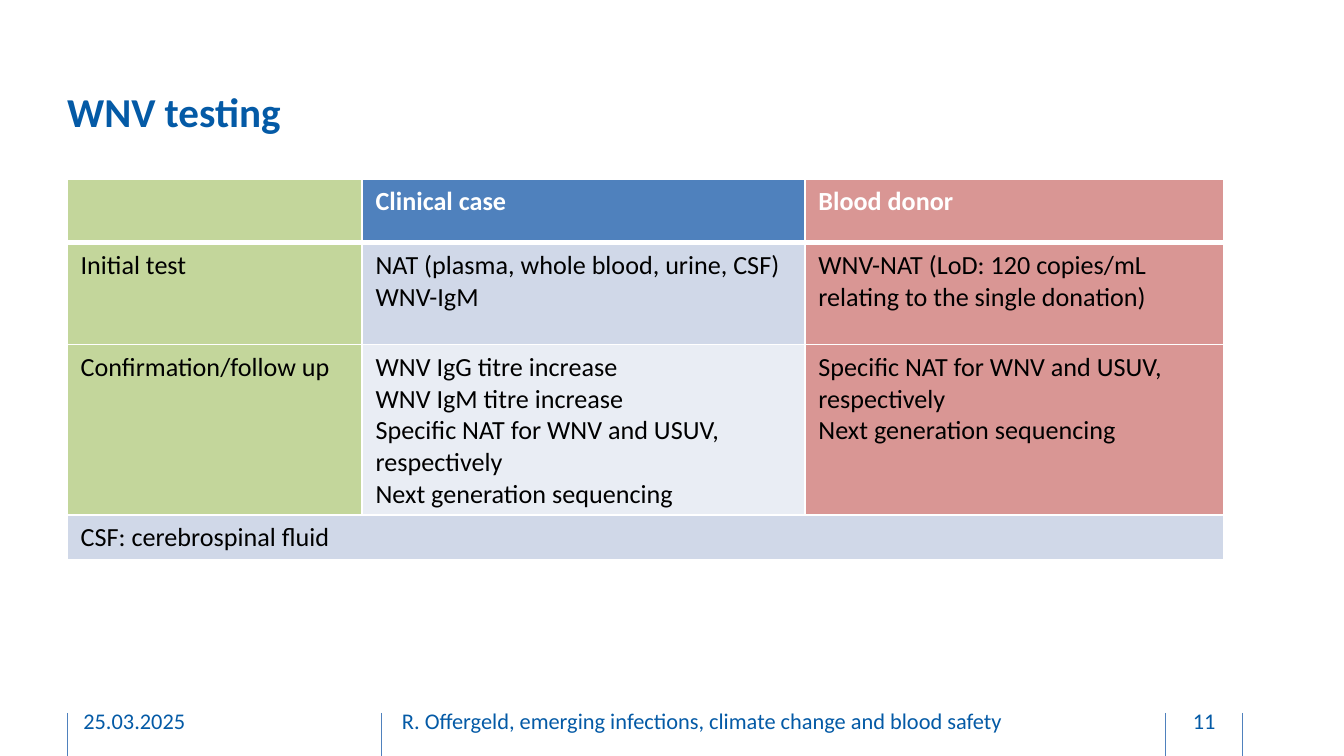
"""Build the WNV testing slide with its comparison table and footer."""
from dataclasses import dataclass

from lxml.etree import SubElement
from pptx import Presentation
from pptx.dml.color import RGBColor as RGB
from pptx.enum.shapes import MSO_CONNECTOR as CONN
from pptx.enum.text import MSO_ANCHOR as ANCHOR, PP_ALIGN as ALIGN
from pptx.oxml import parse_xml
from pptx.oxml.ns import nsdecls, qn
from pptx.util import Inches, Pt


@dataclass(frozen=True)
class Theme:
    font: str = "Calibri"
    title_size: int = 22
    table_size: int = 14
    footer_size: int = 12
    navy: str = "045AA6"
    blue: str = "4F81BD"
    green: str = "C3D69B"
    red: str = "D99694"
    band: str = "D0D8E8"
    pale: str = "E9EDF4"
    white: str = "FFFFFF"
    black: str = "000000"


T = Theme()
prs = Presentation()
prs.slide_width = Inches(10)
prs.slide_height = prs.slide_width * 9 // 16
s = prs.slides.add_slide(prs.slide_layouts[6])
COL = prs.slide_width / 100
ROW = prs.slide_height / 100


def style(p, size, color, bold=False):
    p.font.name, p.font.size, p.font.bold = T.font, Pt(size), bold
    p.font.color.rgb = RGB.from_string(color)


def add_text(text, box, size, inset=0.05, align=ALIGN.LEFT, bold=False):
    x, y, w, h = box
    sp = s.shapes.add_textbox(int(x * COL), int(y * ROW), int(w * COL), int(h * ROW))
    tf = sp.text_frame
    tf.word_wrap, tf.vertical_anchor = True, ANCHOR.MIDDLE
    tf.margin_left = tf.margin_right = 0
    tf.margin_top = tf.margin_bottom = Inches(inset)
    p = tf.paragraphs[0]
    p.text, p.alignment = text, align
    style(p, size, T.navy, bold)


for x in (5, 28.4, 86.7, 92.45):
    line = s.shapes.add_connector(CONN.STRAIGHT, int(x * COL), int(94.3 * ROW),
                                  int(x * COL), prs.slide_height)
    line.line.color.rgb, line.line.width = RGB.from_string(T.blue), Pt(0.5)
    SubElement(line._element.spPr, qn("a:effectLst"))

add_text("WNV testing", (5, 7.8, 87.3, 13.9), T.title_size, inset=0, bold=True)
for text, x, w, align in (
    ("25.03.2025", 6.2, 20.3, ALIGN.LEFT),
    ("R. Offergeld, emerging infections, climate change and blood safety", 29.9, 54.9, ALIGN.LEFT),
    ("11", 86.9, 5.4, ALIGN.CENTER),
):
    add_text(text, (x, 92.7, w, 5.3), T.footer_size, align=align)

rows = [
    ("", "Clinical case", "Blood donor"),
    ("Initial test",
     "NAT (plasma, whole blood, urine, CSF)\nWNV-IgM",
     "WNV-NAT (LoD: 120 copies/mL relating to the single donation)"),
    ("Confirmation/follow up",
     "WNV IgG titre increase\nWNV IgM titre increase\n"
     "Specific NAT for WNV and USUV, respectively\nNext generation sequencing",
     "Specific NAT for WNV and USUV, respectively\nNext generation sequencing"),
    ("CSF: cerebrospinal fluid", "", ""),
]
fills = [(T.green, middle, T.red) for middle in (T.blue, T.band, T.pale)] + [(T.band,) * 3]
widths = (21.95, 32.95, 31.15)
heights = (8.4, 13.5, 21.2, 5.5)

table = s.shapes.add_table(len(rows), len(widths), int(5 * COL), int(23.7 * ROW),
                           int(sum(widths) * COL), int(sum(heights) * ROW)).table
for column, w in zip(table.columns, widths):
    column.width = int(w * COL)
for row, h in zip(table.rows, heights):
    row.height = int(h * ROW)
for i, texts in enumerate(rows):
    for j, text in enumerate(texts):
        cell = table.cell(i, j)
        cell.text = text
        for p in cell.text_frame.paragraphs:
            style(p, T.table_size, T.black if i else T.white, bold=i == 0)
        cell.fill.solid()
        cell.fill.fore_color.rgb = RGB.from_string(fills[i][j])
        for k, side in enumerate("LRTB"):
            thick = (i == 0 and side == "B") or (i == 1 and side == "T")
            cell._tc.tcPr.insert(k, parse_xml(
                f'<a:ln{side} {nsdecls("a")} w="{Pt(3 if thick else 1)}"><a:solidFill>'
                f'<a:srgbClr val="{T.white}"/></a:solidFill></a:ln{side}>'))
table.cell(3, 0).merge(table.cell(3, 2))

prs.save("out.pptx")
